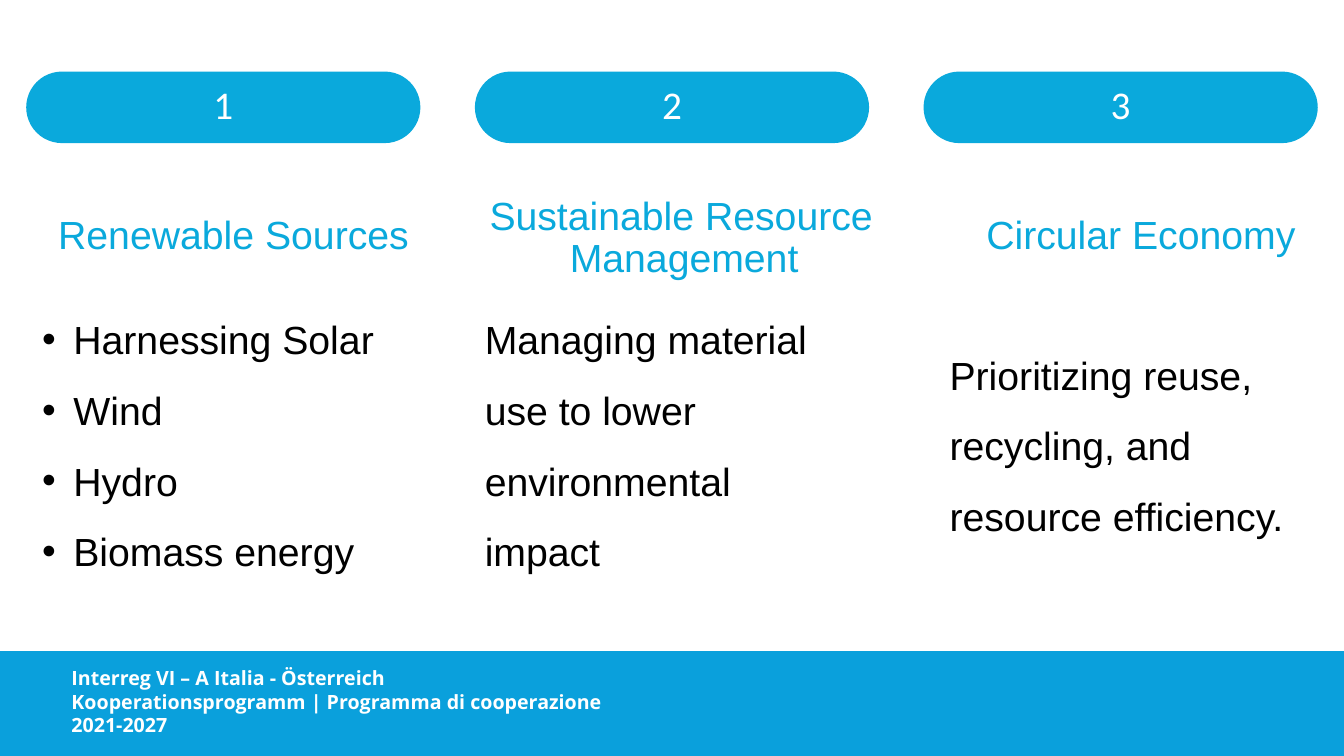
from pptx import Presentation
from pptx.dml.color import RGBColor
from pptx.enum.shapes import MSO_SHAPE
from pptx.enum.text import MSO_ANCHOR, PP_ALIGN
from pptx.oxml.ns import qn
from pptx.util import Inches, Pt
from lxml import etree

RECT, PILL = MSO_SHAPE.RECTANGLE, MSO_SHAPE.ROUNDED_RECTANGLE
TOP, MIDDLE = MSO_ANCHOR.TOP, MSO_ANCHOR.MIDDLE
LEFT, CENTER = PP_ALIGN.LEFT, PP_ALIGN.CENTER
WIDE, HIGH = 13.33, 7.5
START, STEP = 0.26, 4.45  # first column and column pitch
BLUE, WHITE, BLACK = "0AA9DC", "FFFFFF", "000000"

prs = Presentation()
prs.slide_width, prs.slide_height = Inches(WIDE), Inches(HIGH)
slide = prs.slides.add_slide(prs.slide_layouts[6])


def block(kind, x, y, w, h, color):
    shape = slide.shapes.add_shape(kind, *map(Inches, (x, y, w, h)))
    shape.shadow.inherit = False
    shape.fill.solid()
    shape.fill.fore_color.rgb = RGBColor.from_string(color)
    shape.line.fill.background()
    return shape


def write(shape, lines, face, size, color, align=LEFT, space=None,
          indent=(0, 0), bullet=False, bold=False, inset=True, anchor=TOP):
    frame = shape.text_frame
    frame.word_wrap = True
    frame.vertical_anchor = anchor
    if not inset:
        frame.margin_left = frame.margin_right = 0
        frame.margin_top = frame.margin_bottom = 0
    frame.text = "\n".join(lines)
    for para in frame.paragraphs:
        props = para._p.get_or_add_pPr()
        props.set("marL", str(Inches(indent[0])))
        props.set("indent", str(Inches(indent[1])))
        para.alignment = align
        para.line_spacing = space
        if bullet:
            etree.SubElement(props, qn("a:buFont"), typeface="Arial")
            etree.SubElement(props, qn("a:buChar"), char="•")
        para.font.name, para.font.size = face, Pt(size)
        para.font.bold = bold
        para.font.color.rgb = RGBColor.from_string(color)


# Footer band
block(RECT, 0, 6.46, WIDE, HIGH - 6.46, "0AA0DC")
foot = slide.shapes.add_textbox(*map(Inches, (0.61, 6.56, 5.98, 0.81)))
write(foot, ["Interreg VI – A Italia - Österreich\v"
             "Kooperationsprogramm | Programma di cooperazione", "2021-2027"],
      "Open Sans", 14, WHITE, bold=True)

# Columns: heading, its box (x, y, h), body lines, its box (x, y, h), bullets
columns = [
    ("Renewable Sources", (0.14, 2.14, 0.71),
     ["Harnessing Solar", "Wind", "Hydro", "Biomass energy"],
     (0.32, 2.85, 2.84), True),
    ("Sustainable Resource Management", (4.58, 1.95, 1.09),
     ["Managing material use to lower environmental impact"],
     (4.71, 2.85, 2.84), False),
    ("Circular Economy", (9.14, 2.14, 0.71),
     ["Prioritizing reuse, recycling, and resource efficiency."],
     (9.32, 3.2, 2.13), False),
]
for i, (head, (hx, hy, hh), body, (bx, by, bh), dots) in enumerate(columns):
    # Numbered pill
    pill = block(PILL, START + i * STEP, 0.71, 3.91, 0.71, BLUE)
    pill.adjustments[0] = 0.5
    write(pill, [str(i + 1)], "Calibri", 28, WHITE, CENTER, Pt(28),
          inset=False, anchor=MIDDLE)

    # Heading
    title = slide.shapes.add_textbox(*map(Inches, (hx, hy, 4.16, hh)))
    write(title, [head], "Arial", 28, BLUE, CENTER, 0.9, (0.25, -0.06),
          inset=False)

    # Body
    text = slide.shapes.add_textbox(*map(Inches, (bx, by, 3.8, bh)))
    write(text, body, "Arial", 28, BLACK, space=1.5,
          indent=(0.31, -0.31) if dots else (0, 0), bullet=dots)

prs.save("out.pptx")
